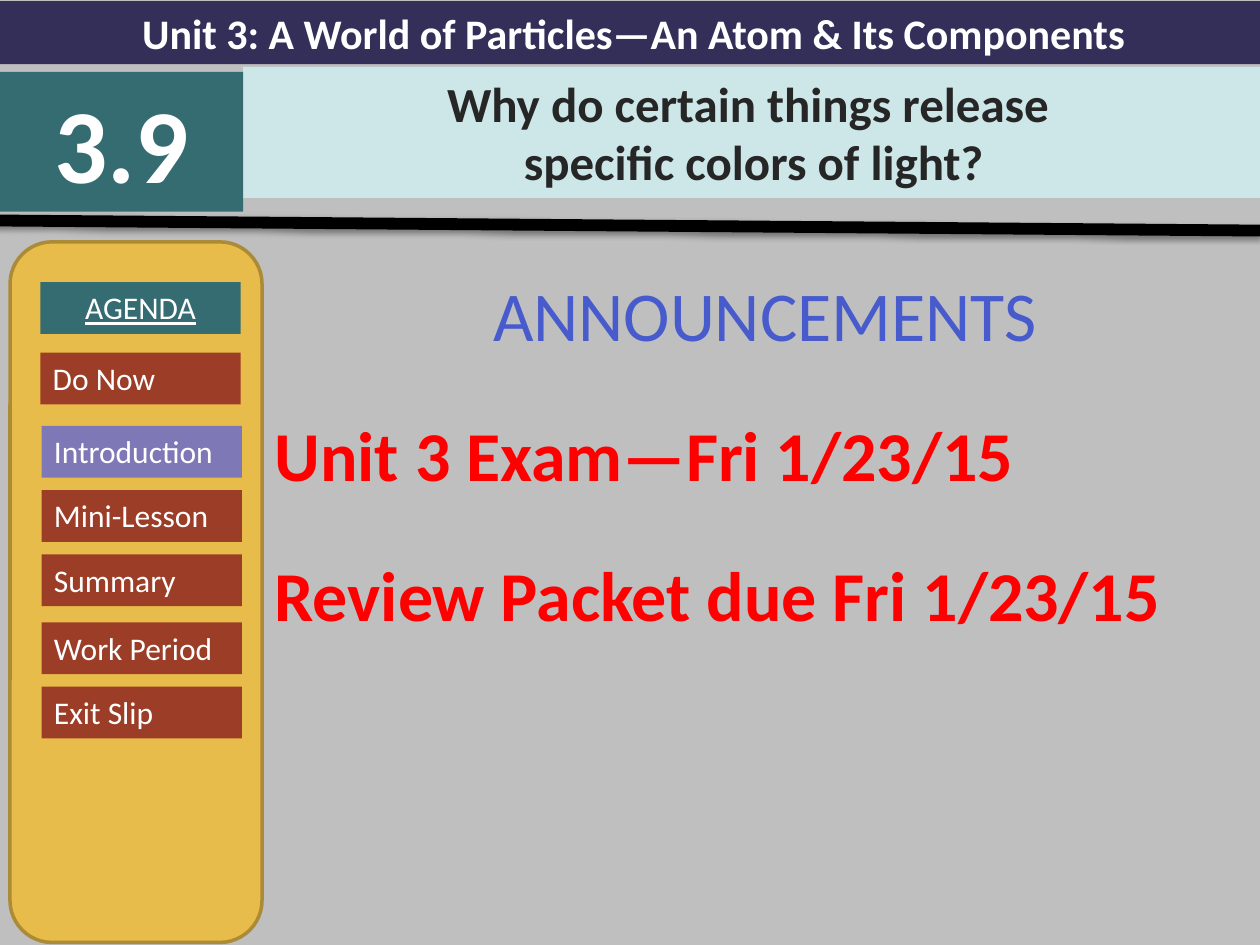
from typing import NamedTuple

from lxml import etree
from pptx import Presentation
from pptx import util as u
from pptx.dml.color import RGBColor
from pptx.enum import shapes, text
from pptx.oxml import ns

FONT = "Calibri"
COLORS = {
    "background": "BFBFBF", "navy": "342F59", "teal": "346C71", "ice": "CDE6E8",
    "gold": "E8BC4A", "gold_edge": "AC8B37", "rust": "9C3D28", "violet": "7E78B7",
    "heading": "475BCD", "alert": "FF0000", "dark": "262626",
    "white": "FFFFFF", "black": "000000",
}
LEFT, CENTER = text.PP_ALIGN.LEFT, text.PP_ALIGN.CENTER


class Box(NamedTuple):
    """Left, top, width and height in percent of the slide's size."""
    x: float
    y: float
    w: float
    h: float


class Style(NamedTuple):
    size: int
    color: str
    bold: bool = False
    underline: bool = False
    align: text.PP_ALIGN = CENTER
    spacing: float = 1.0


class Item(NamedTuple):
    label: str
    top: float
    fill: str = "rust"
    left: float = 3.3


BANNER = Box(0, 0.13, 100.6, 6.67)
NUMBER = Box(0, 7.6, 19.3, 14.8)
QUESTION = Box(19.3, 7.07, 81, 13.87)
PANEL = Box(0.8, 25.6, 20, 74.13)
BODY = Box(20.8, 27.2, 79.8, 72.8)
ITEM_W, ITEM_H = 15.9, 5.47

ITEM_STYLE = Style(18, "white", align=LEFT)
NOTICE = Style(40, "alert", bold=True, align=LEFT, spacing=1.5)
AGENDA = [
    Item("Do Now", 37.33, left=3.2),
    Item("Introduction", 45.07, "violet"),
    Item("Mini-Lesson", 51.87),
    Item("Summary", 58.67),
    Item("Work Period", 65.87),
    Item("Exit Slip", 72.67),
]

prs = Presentation()
prs.slide_width, prs.slide_height = u.Inches(10), u.Inches(7.5)


def rgb(name: str) -> RGBColor:
    return RGBColor.from_string(COLORS[name])


def across(share: float) -> int:
    return int(prs.slide_width * share / 100)


def down(share: float) -> int:
    return int(prs.slide_height * share / 100)


def place(sp, box: Box) -> None:
    sp.left, sp.top = across(box.x), down(box.y)
    sp.width, sp.height = across(box.w), down(box.h)


def paint(sp, name: str) -> None:
    sp.fill.solid()
    sp.fill.fore_color.rgb = rgb(name)


def write(sp, lines: list[tuple[str, Style]]) -> None:
    tf = sp.text_frame
    tf.word_wrap = True
    tf.auto_size = text.MSO_AUTO_SIZE.NONE
    tf.vertical_anchor = text.MSO_ANCHOR.TOP
    for i, (words, style) in enumerate(lines):
        p = tf.add_paragraph() if i else tf.paragraphs[0]
        p.alignment, p.line_spacing = style.align, style.spacing
        r = p.add_run()
        r.text = words
        r.font.name, r.font.size = FONT, u.Pt(style.size)
        r.font.bold, r.font.underline = style.bold, style.underline
        r.font.color.rgb = rgb(style.color)


def add_block(s, box: Box, fill: str, kind=shapes.MSO_SHAPE.RECTANGLE):
    sp = s.shapes.add_shape(kind, 0, 0, 0, 0)
    place(sp, box)
    sp.shadow.inherit = False
    paint(sp, fill)
    sp.line.fill.background()
    return sp


def add_rule(s) -> None:
    rule = s.shapes.add_connector(shapes.MSO_CONNECTOR.STRAIGHT, across(-0.5),
                                  down(23.33), across(100), down(24.4))
    rule.line.color.rgb = rgb("black")
    rule.line.width = u.Pt(6.75)
    effects = etree.SubElement(rule._element.spPr, ns.qn("a:effectLst"))
    shadow = etree.SubElement(effects, ns.qn("a:outerShdw"), blurRad=str(u.Pt(3.1)),
                              dist=str(u.Pt(1.6)), dir="5400000", rotWithShape="0")
    color = etree.SubElement(shadow, ns.qn("a:srgbClr"), val=COLORS["black"])
    etree.SubElement(color, ns.qn("a:alpha"), val="38000")


def main() -> None:
    s = prs.slides.add_slide(prs.slide_layouts[0])
    s.background.fill.solid()
    s.background.fill.fore_color.rgb = rgb("background")

    # Announcements
    body = s.placeholders[1]
    place(body, BODY)
    write(body, [
        ("ANNOUNCEMENTS", Style(40, "heading", spacing=1.1)),
        ("Unit 3 Exam—Fri 1/23/15", NOTICE),
        ("Review Packet due Fri 1/23/15", NOTICE),
    ])

    # Header: unit, lesson number and question
    write(add_block(s, BANNER, "navy"),
          [("Unit 3: A World of Particles—An Atom & Its Components",
            Style(24, "white", bold=True))])
    write(add_block(s, NUMBER, "teal"), [("3.9", Style(60, "white", bold=True))])
    title = s.shapes.title
    place(title, QUESTION)
    paint(title, "ice")
    question = Style(28, "dark", bold=True)
    write(title, [("Why do certain things release ", question),
                  ("specific colors of light?", question)])
    add_rule(s)

    # Agenda panel
    panel = add_block(s, PANEL, "gold", shapes.MSO_SHAPE.ROUNDED_RECTANGLE)
    panel.line.color.rgb = rgb("gold_edge")
    panel.line.width = u.Pt(2)
    write(add_block(s, Box(3.2, 29.87, ITEM_W, ITEM_H), "teal"),
          [("AGENDA", Style(18, "white", underline=True))])
    for item in AGENDA:
        sp = add_block(s, Box(item.left, item.top, ITEM_W, ITEM_H), item.fill)
        write(sp, [(item.label, ITEM_STYLE)])

    prs.save("out.pptx")


if __name__ == "__main__":
    main()
